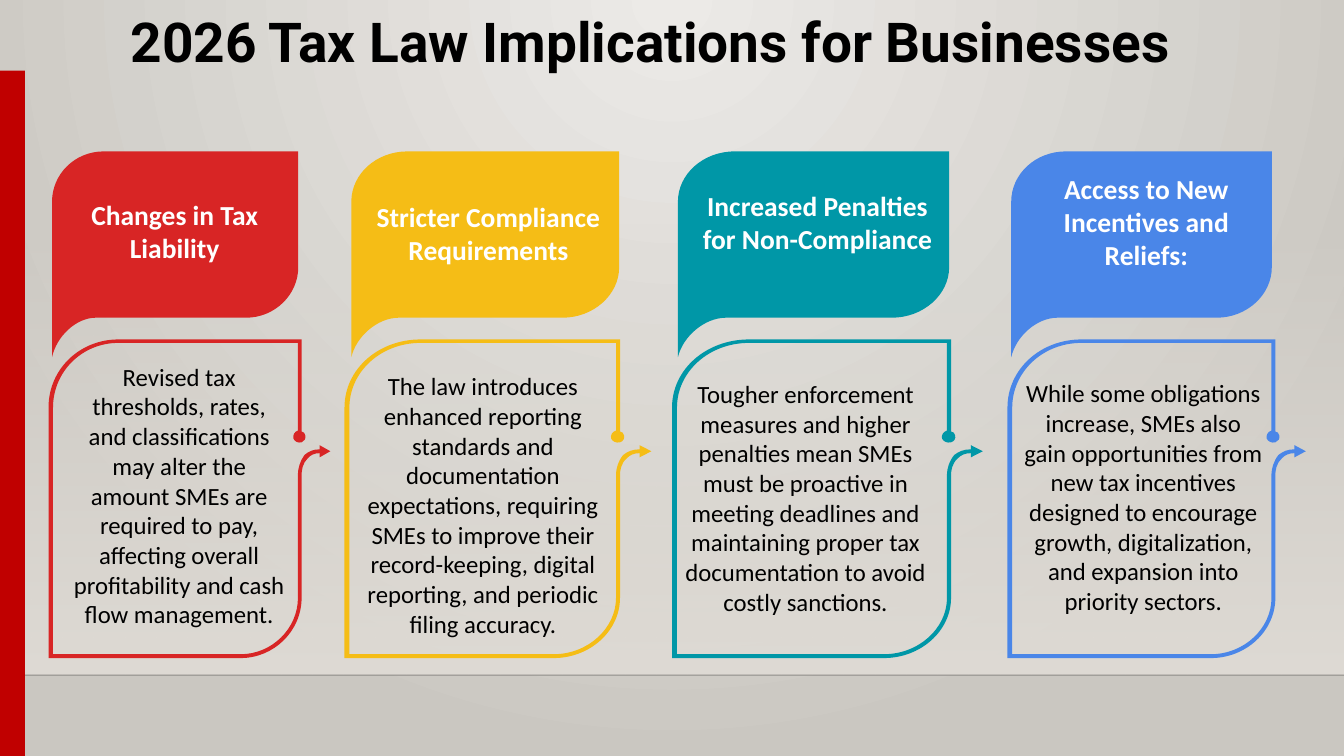
from dataclasses import dataclass

from lxml import etree
from pptx import Presentation
from pptx.dml.color import RGBColor
from pptx.enum.shapes import MSO_CONNECTOR, MSO_SHAPE
from pptx.enum.text import MSO_ANCHOR, PP_ALIGN
from pptx.oxml.ns import qn
from pptx.util import Inches, Pt

STRAIGHT = MSO_CONNECTOR.STRAIGHT
RECTANGLE = MSO_SHAPE.RECTANGLE
TOP, MIDDLE = MSO_ANCHOR.TOP, MSO_ANCHOR.MIDDLE
CENTER = PP_ALIGN.CENTER

BLACK = RGBColor(0x00, 0x00, 0x00)
WHITE = RGBColor(0xFF, 0xFF, 0xFF)
GLOW = RGBColor(0xEC, 0xEA, 0xE7)
STONE = RGBColor(0xCA, 0xC7, 0xC1)
WALL = RGBColor(0xDF, 0xDB, 0xD5)
CRIMSON = RGBColor(0xC0, 0x00, 0x00)
RED = RGBColor(0xD8, 0x25, 0x25)
YELLOW = RGBColor(0xF5, 0xBD, 0x16)
TEAL = RGBColor(0x00, 0x97, 0xA7)
BLUE = RGBColor(0x4A, 0x86, 0xE8)

# Outlines in percent of their own box: pairs are corners, sixes are Bézier curves.
BANNER = [
    (21, 0), (9.3, 0, 0, 11, 0, 24.5), (0, 100),
    (1.8, 90, 9.7, 80.8, 17.8, 80.8), (78.9, 80.8),
    (90.4, 80.8, 100, 69.7, 100, 56.3), (100, 0),
]
FRAME = [
    (100, 35.1), (96.2, 33.2), (96.2, 34.5),
    (93.9, 34.5, 92.4, 35.1, 90.8, 36.3),
    (89.2, 38.2, 88.5, 40.7, 88.5, 42.2), (88.5, 81.1),
    (88.5, 90.7, 79.3, 98.8, 68.2, 98.8), (1.6, 98.8), (1.6, 21.4),
    (1.6, 10.2, 11.8, 1.1, 24.8, 1.1), (88.5, 1.1), (88.5, 28.6),
    (87.3, 28.9, 86.6, 30.1, 86.9, 31.1),
    (87.3, 32, 88.5, 32.6, 89.8, 32.3),
    (90.8, 32, 91.4, 31.1, 91.1, 30.1),
    (91.1, 29.5, 90.4, 28.9, 89.8, 28.9), (89.8, 0), (24.8, 0),
    (11.1, 0, 0, 9.3, 0, 21.4), (0, 100), (68.2, 100),
    (79.9, 100, 89.8, 91.6, 89.8, 81.1), (89.8, 42.5),
    (89.8, 41.3, 90.1, 38.8, 92, 37.3),
    (93, 36.3, 94.3, 35.7, 96.2, 35.7), (96.2, 37),
]


@dataclass
class Panel:
    """Spans are (left, width); places are (left, top, width, height)."""
    color: RGBColor
    banner_span: tuple
    frame_span: tuple
    heading: str
    heading_place: tuple
    body: str
    body_place: tuple


PANELS = [
    Panel(RED, (3.87, 18.32), (3.61, 20.97),
          "Changes in Tax Liability", (3.83, 25.52, 18.34, 14.6),
          "Revised tax thresholds, rates, and classifications may alter the amount "
          "SMEs are required to pay, affecting overall profitability and cash flow "
          "management.", (4.68, 47.18, 17.3, 37.04)),
    Panel(YELLOW, (26.14, 19.93), (25.63, 22.83),
          "Stricter Compliance Requirements", (26.36, 25.79, 19.96, 10.08),
          "The law introduces enhanced reporting standards and documentation "
          "expectations, requiring SMEs to improve their record-keeping, digital "
          "reporting, and periodic filing accuracy.", (26.36, 48.43, 19.15, 37.04)),
    Panel(TEAL, (50.44, 20.18), (50, 23.12),
          "Increased Penalties for Non-Compliance", (50.7, 24.35, 20.25, 10.08),
          "Tougher enforcement measures and higher penalties mean SMEs must be "
          "proactive in meeting deadlines and maintaining proper tax documentation "
          "to avoid costly sanctions.", (50.25, 49.45, 19.37, 32.98)),
    Panel(BLUE, (75.24, 19.39), (74.96, 22.2),
          "Access to New Incentives and Reliefs:", (76.12, 22.12, 18.34, 14.5),
          "While some obligations increase, SMEs also gain opportunities from new "
          "tax incentives designed to encourage growth, digitalization, and "
          "expansion into priority sectors.", (75.46, 49.35, 19.22, 37.04)),
]


def set_alpha(element, percent):
    color = next(element.iter(qn("a:srgbClr")))
    etree.SubElement(color, qn("a:alpha"), val=str(percent * 1000))


class Painter:
    """Draws on one page; every length is a percent of the page's size."""

    def __init__(self, deck):
        self.page = deck.slides.add_slide(deck.slide_layouts[6])
        self.column = deck.slide_width / 100
        self.row = deck.slide_height / 100

    def place(self, left, top, width, height):
        return (round(left * self.column), round(top * self.row),
                round(width * self.column), round(height * self.row))

    def radial_background(self, inner, outer):
        fill = self.page.background.fill
        fill.gradient()
        for stop, color in zip(fill.gradient_stops, (inner, outer)):
            stop.color.rgb = color
        gradient = next(self.page.element.iter(qn("a:gradFill")))
        gradient.remove(gradient.find(qn("a:lin")))
        glow = etree.SubElement(gradient, qn("a:path"), path="circle")
        etree.SubElement(glow, qn("a:fillToRect"), l="43000", r="43000", b="100000")

    def paint(self, shape, color):
        shape.shadow.inherit = False
        shape.fill.solid()
        shape.fill.fore_color.rgb = color
        shape.line.fill.background()

    def rectangle(self, place, color):
        shape = self.page.shapes.add_shape(RECTANGLE, *self.place(*place))
        self.paint(shape, color)
        return shape

    def fading_rectangle(self, place, color):
        """Fade from clear at the top to the full colour at the bottom."""
        shape = self.rectangle(place, color)
        shape.fill.gradient()
        shape.fill.gradient_angle = 270
        for stop in shape.fill.gradient_stops:
            stop.color.rgb = color
        set_alpha(shape.element.spPr, 0)

    def horizon(self, top, color, alpha):
        left, y, width, _ = self.place(0, top, 100, 0)
        line = self.page.shapes.add_connector(STRAIGHT, left, y, left + width, y)
        line.line.color.rgb = color
        line.line.width = Pt(1)
        properties = line.element.spPr
        set_alpha(properties, alpha)
        etree.SubElement(properties, qn("a:effectLst"))

    def outline(self, steps, place, color):
        """Build the corners as a freeform, then bend the steps that are curves."""
        left, top, width, height = self.place(*place)

        def local(x, y):
            return round(x * width / 100), round(y * height / 100)

        corners = [local(*step[-2:]) for step in steps]
        builder = self.page.shapes.build_freeform(*corners[0])
        builder.add_line_segments(corners[1:], close=True)
        shape = builder.convert_to_shape(left, top)
        self.paint(shape, color)
        segments = list(shape.element.iter(qn("a:lnTo")))
        for step, segment in zip(steps[1:], segments):
            if len(step) == 6:
                curve = etree.Element(qn("a:cubicBezTo"))
                for index in (0, 2, 4):
                    x, y = local(*step[index:index + 2])
                    etree.SubElement(curve, qn("a:pt"), x=str(x), y=str(y))
                segment.getparent().replace(segment, curve)

    def text(self, words, place, size, color, font="Calibri", bold=False,
             anchor=TOP, spacing=1.0):
        box = self.page.shapes.add_textbox(*self.place(*place))
        frame = box.text_frame
        frame.word_wrap = True
        frame.vertical_anchor = anchor
        para = frame.paragraphs[0]
        para.text = words
        para.alignment = CENTER
        para.line_spacing = spacing
        para.font.name = font
        para.font.size = Pt(size)
        para.font.bold = bold
        para.font.color.rgb = color


def main():
    deck = Presentation()
    deck.slide_width, deck.slide_height = Inches(13.58), Inches(7.64)
    painter = Painter(deck)

    painter.radial_background(GLOW, STONE)
    painter.fading_rectangle((0, 29.45, 100, 59.82), WALL)
    painter.horizon(89.3, BLACK, 20)
    painter.rectangle((0, 9.34, 1.86, 90.66), CRIMSON)
    painter.text("2026 Tax Law Implications for Businesses ", (0.29, 0.39, 97.2, 11.13),
                 40, BLACK, font="Roboto", bold=True, anchor=MIDDLE, spacing=0.9)

    for panel in PANELS:
        left, width = panel.banner_span
        painter.outline(BANNER, (left, 20.03, width, 27.23), panel.color)
        left, width = panel.frame_span
        painter.outline(FRAME, (left, 44.9, width, 42.15), panel.color)
        painter.text(panel.body, panel.body_place, 18, BLACK)
        painter.text(panel.heading, panel.heading_place, 20, WHITE, bold=True)

    deck.save("out.pptx")


if __name__ == "__main__":
    main()
